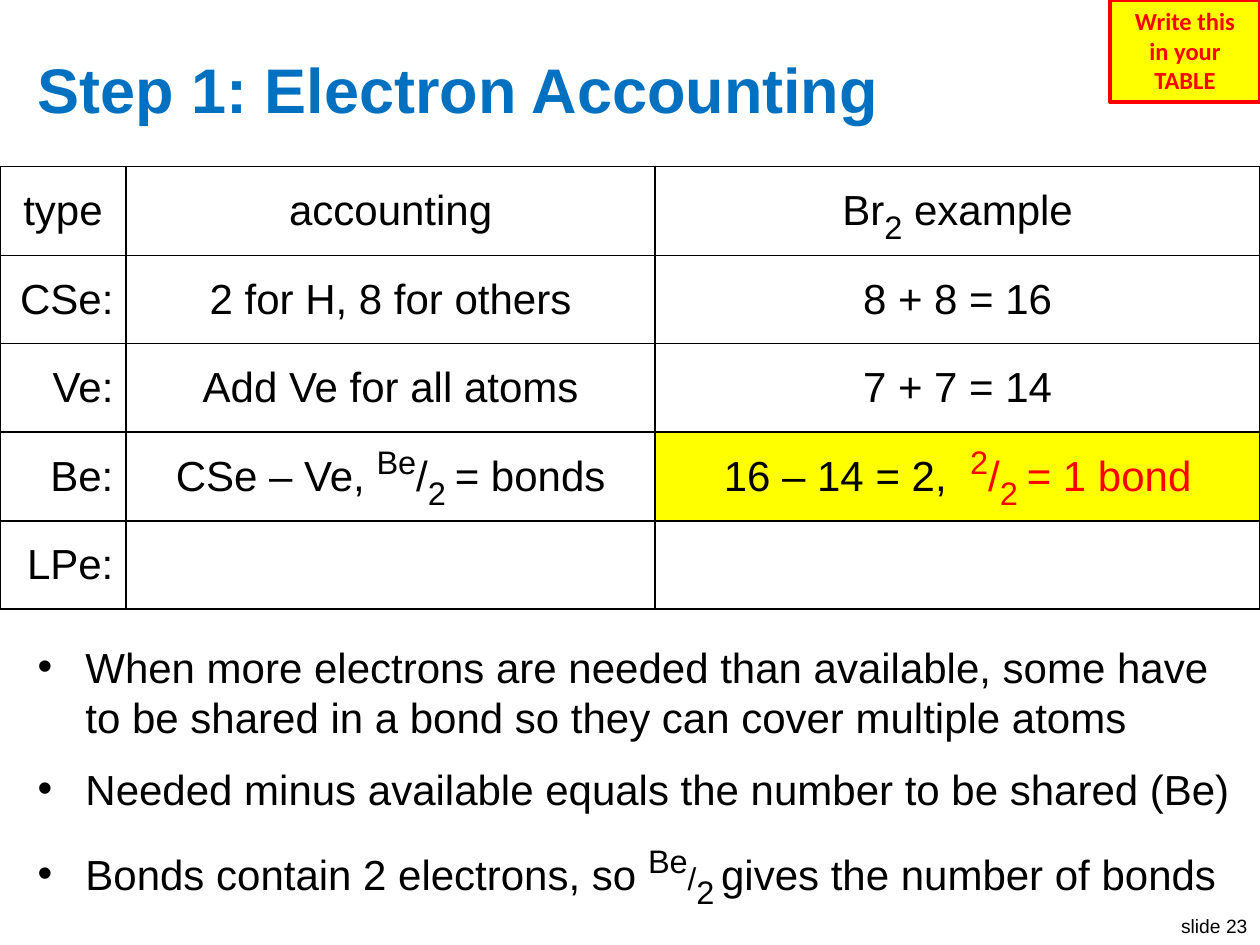
from lxml.etree import SubElement
from pptx import Presentation
from pptx.dml.color import RGBColor
from pptx.enum.shapes import MSO_SHAPE
from pptx.enum.text import MSO_ANCHOR, PP_ALIGN
from pptx.oxml.ns import qn
from pptx.util import Inches, Pt

BLACK = RGBColor(0x00, 0x00, 0x00)
WHITE = RGBColor(0xFF, 0xFF, 0xFF)
BLUE = RGBColor(0x00, 0x70, 0xC0)
RED = RGBColor(0xFF, 0x00, 0x00)
YELLOW = RGBColor(0xFF, 0xFF, 0x00)

SUPER, SUB = 30000, -25000
COLUMN_WIDTHS = [1, 4.2, 4.8]
ROW_HEIGHT = 0.7
HIGHLIGHTED_CELL = (3, 2)


def raised(text, color=BLACK):
    return text, {"size": Pt(32), "color": color, "baseline": SUPER}


def lowered(text, color=BLACK):
    return text, {"size": Pt(32), "color": color, "baseline": SUB}


def red(text):
    return text, {"color": RED}


ACCOUNTING_ROWS = [
    [["type"], ["accounting"], ["Br", lowered("2"), " example"]],
    [["CSe:"], ["2 for H, 8 for others"], ["8 + 8 = 16"]],
    [["Ve:"], ["Add Ve for all atoms"], ["7 + 7 = 14"]],
    [["Be:"],
     ["CSe – Ve, ", raised("Be"), "/", lowered("2 "), "= bonds"],
     ["16 – 14 = 2,  ", raised("2", RED), red("/"), lowered("2 ", RED),
      red("= 1 bond")]],
    [["LPe:"], [], []],
]

EXPLANATIONS = [
    ["When more electrons are needed than available, some have to be shared "
     "in a bond so they can cover multiple atoms"],
    ["Needed minus available equals the number to be shared (Be)"],
    ["Bonds contain 2 electrons, so ", raised("Be"), ("/", {"size": Pt(18)}),
     lowered("2"), (" ", {"baseline": SUB}), "gives the number of bonds"],
]


def write_runs(paragraph, pieces, **base_format):
    defaults = {"name": "Arial", "size": Pt(24), "bold": False, "color": BLACK}
    for piece in pieces:
        text, changes = (piece, {}) if isinstance(piece, str) else piece
        run = paragraph.add_run()
        run.text = text
        values = {**defaults, **base_format, **changes}
        run.font.color.rgb = values.pop("color")
        baseline = values.pop("baseline", None)
        for attribute, value in values.items():
            setattr(run.font, attribute, value)
        if baseline is not None:
            run.font._element.set("baseline", str(baseline))


def add_text(slide, position, paragraphs, align=PP_ALIGN.LEFT,
             anchor=MSO_ANCHOR.TOP, wrap=True, **base_format):
    frame = slide.shapes.add_textbox(*map(Inches, position)).text_frame
    frame.word_wrap = wrap
    frame.vertical_anchor = anchor
    for index, pieces in enumerate(paragraphs):
        paragraph = frame.add_paragraph() if index else frame.paragraphs[0]
        paragraph.alignment = align
        write_runs(paragraph, pieces, **base_format)
    return frame


def add_bullets(frame):
    for paragraph in frame.paragraphs:
        paragraph.space_before = Pt(12)
        properties = paragraph._p.get_or_add_pPr()
        properties.set("marL", str(Inches(0.38)))
        properties.set("indent", str(Inches(-0.38)))
        SubElement(properties, qn("a:buFont"), typeface="Arial")
        SubElement(properties, qn("a:buChar"), char="•")


def add_borders(cell):
    properties = cell._tc.get_or_add_tcPr()
    for position, side in enumerate(("a:lnL", "a:lnR", "a:lnT", "a:lnB")):
        border = SubElement(properties, qn(side), w=str(Pt(1)))
        fill = SubElement(border, qn("a:solidFill"))
        SubElement(fill, qn("a:srgbClr"), val=str(BLACK))
        properties.insert(position, border)


def add_accounting_table(slide):
    row_count = len(ACCOUNTING_ROWS)
    table = slide.shapes.add_table(
        row_count, len(COLUMN_WIDTHS), Inches(0), Inches(1.32),
        Inches(sum(COLUMN_WIDTHS)), Inches(ROW_HEIGHT * row_count)).table
    table.first_row = table.horz_banding = False
    for column, width in zip(table.columns, COLUMN_WIDTHS):
        column.width = Inches(width)
    for r, row in enumerate(ACCOUNTING_ROWS):
        table.rows[r].height = Inches(ROW_HEIGHT)
        for c, pieces in enumerate(row):
            cell = table.cell(r, c)
            cell.vertical_anchor = MSO_ANCHOR.MIDDLE
            cell.fill.solid()
            cell.fill.fore_color.rgb = (
                YELLOW if (r, c) == HIGHLIGHTED_CELL else WHITE)
            add_borders(cell)
            paragraph = cell.text_frame.paragraphs[0]
            is_label = r > 0 and c == 0
            paragraph.alignment = PP_ALIGN.RIGHT if is_label else PP_ALIGN.CENTER
            write_runs(paragraph, pieces)


def add_reminder(slide):
    reminder = slide.shapes.add_shape(
        MSO_SHAPE.RECTANGLE, Inches(8.81), Inches(0), Inches(1.19), Inches(0.81))
    reminder.shadow.inherit = False
    reminder.fill.solid()
    reminder.fill.fore_color.rgb = YELLOW
    reminder.line.color.rgb = RED
    reminder.line.width = Pt(2.25)
    frame = reminder.text_frame
    frame.word_wrap = True
    frame.vertical_anchor = MSO_ANCHOR.TOP
    for index, text in enumerate(("Write this", "in your TABLE")):
        paragraph = frame.add_paragraph() if index else frame.paragraphs[0]
        paragraph.alignment = PP_ALIGN.CENTER
        write_runs(paragraph, [text], name="Calibri", size=Pt(14), bold=True,
                   color=RED)


def main():
    presentation = Presentation()
    presentation.slide_width = Inches(10)
    presentation.slide_height = Inches(7.5)
    slide = presentation.slides.add_slide(presentation.slide_layouts[6])
    add_text(slide, (9.25, 7.21, 0.75, 0.29), [["slide 23"]],
             align=PP_ALIGN.RIGHT, wrap=False, size=Pt(11))
    add_text(slide, (0.2, 0.3, 9.6, 0.8), [["Step 1: Electron Accounting"]],
             anchor=MSO_ANCHOR.MIDDLE, size=Pt(36), bold=True, color=BLUE)
    add_bullets(add_text(slide, (0.2, 5.04, 9.8, 2.22), EXPLANATIONS))
    add_accounting_table(slide)
    add_reminder(slide)
    presentation.save("out.pptx")


if __name__ == "__main__":
    main()
